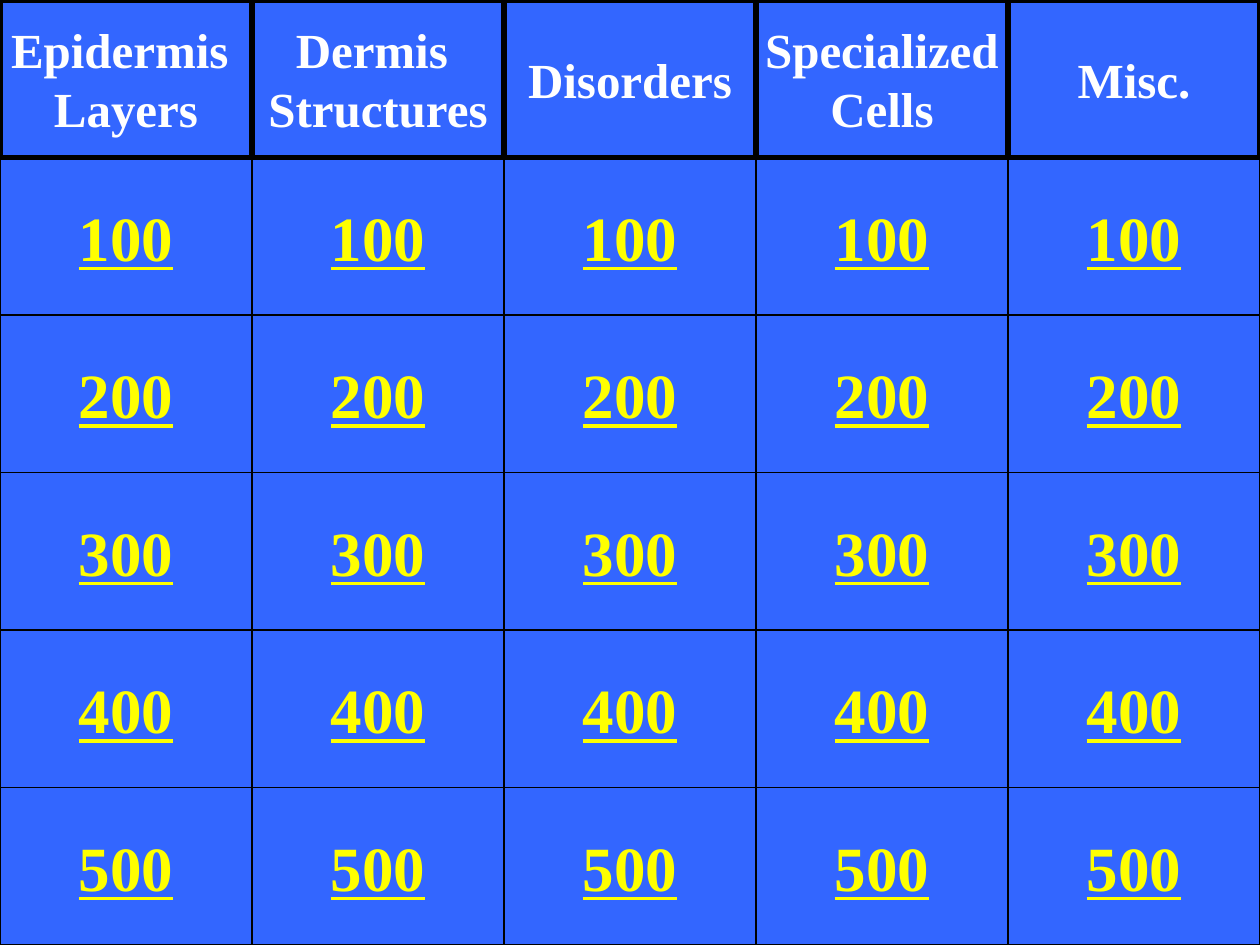
import pptx
import pptx.util
from pptx.dml.color import RGBColor
from pptx.enum.shapes import MSO_SHAPE
from pptx.enum.text import MSO_ANCHOR, PP_ALIGN
from pptx.util import Inches

TOPICS = [
    ["Epidermis ", "Layers"],
    ["Dermis ", "Structures"],
    ["Disorders"],
    ["Specialized", "Cells"],
    ["Misc."],
]
POINTS = [100, 200, 300, 400, 500]

WIDE, HIGH = 10, 7.5
CELL_W = WIDE / len(TOPICS)
CELL_H = HIGH / (len(POINTS) + 1)
BLUE, BLACK, WHITE, YELLOW = "3366FF", "000000", "FFFFFF", "FFFF00"


def paint(fill, color):
    fill.solid()
    fill.fore_color.rgb = RGBColor.from_string(color)


def add_cell(slide, kind, col, row, lines, size, color, border, under=None):
    cell = slide.shapes.add_shape(
        kind, Inches(col * CELL_W), Inches(row * CELL_H),
        Inches(CELL_W), Inches(CELL_H))
    cell.shadow.inherit = False
    paint(cell.fill, BLUE)
    paint(cell.line.fill, BLACK)
    cell.line.width = pptx.util.Pt(border)
    frame = cell.text_frame
    frame.word_wrap = False
    frame.vertical_anchor = MSO_ANCHOR.MIDDLE
    frame.text = "\n".join(lines)
    for para in frame.paragraphs:
        para.alignment = PP_ALIGN.CENTER
        font = para.font
        font.name = "Times New Roman"
        font.size = pptx.util.Pt(size)
        font.bold = True
        font.underline = under
        paint(font.fill, color)


def main():
    deck = pptx.Presentation()
    deck.slide_width, deck.slide_height = Inches(WIDE), Inches(HIGH)
    slide = deck.slides.add_slide(deck.slide_layouts[6])
    paint(slide.background.fill, BLUE)
    for col in range(len(TOPICS)):
        for row, value in enumerate(POINTS, 1):
            add_cell(slide, MSO_SHAPE.ACTION_BUTTON_CUSTOM, col, row,
                     [str(value)], 36, YELLOW, 0.75, under=True)
    for col, lines in enumerate(TOPICS):
        add_cell(slide, MSO_SHAPE.RECTANGLE, col, 0, lines, 28, WHITE, 3)
    deck.save("out.pptx")


if __name__ == "__main__":
    main()
